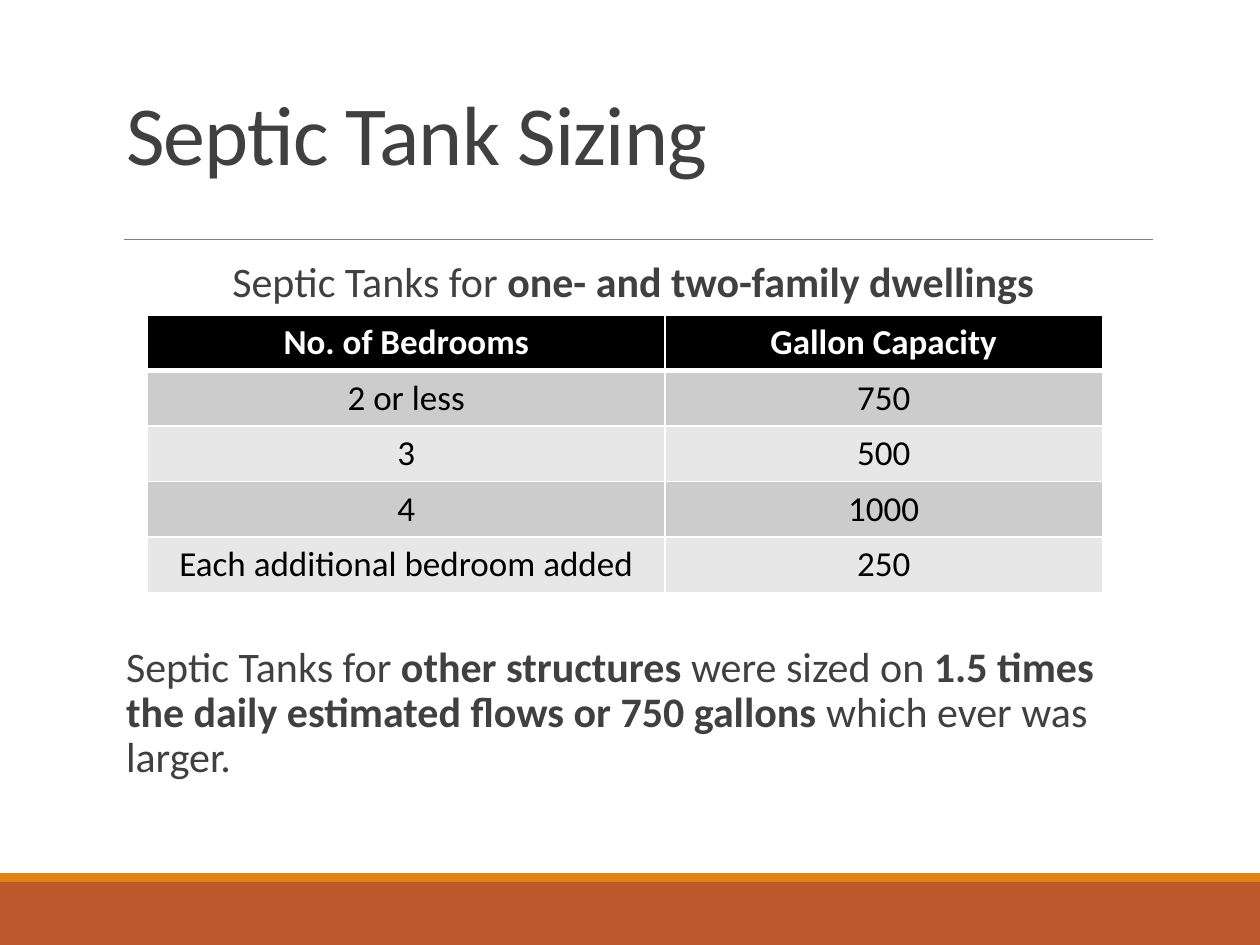
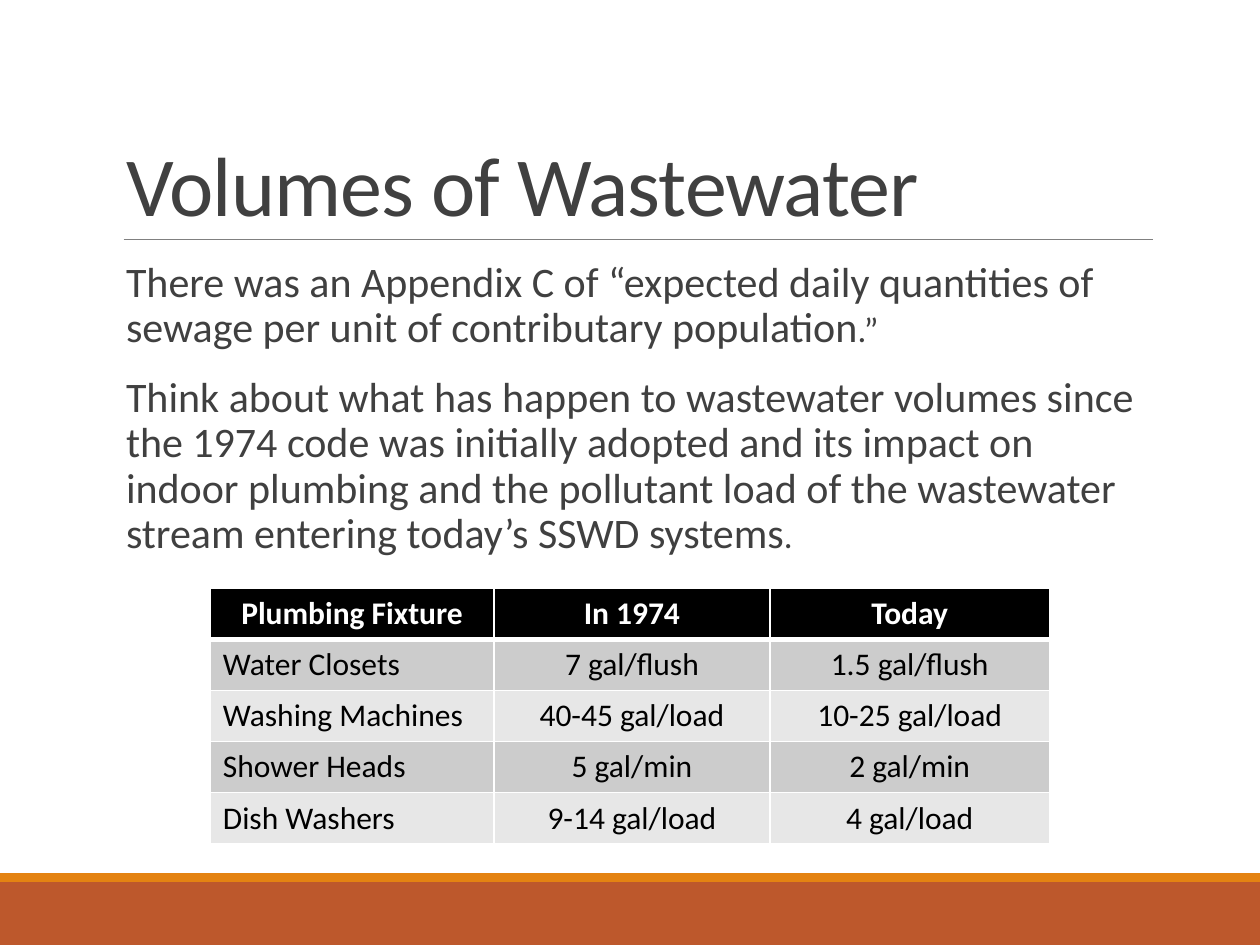
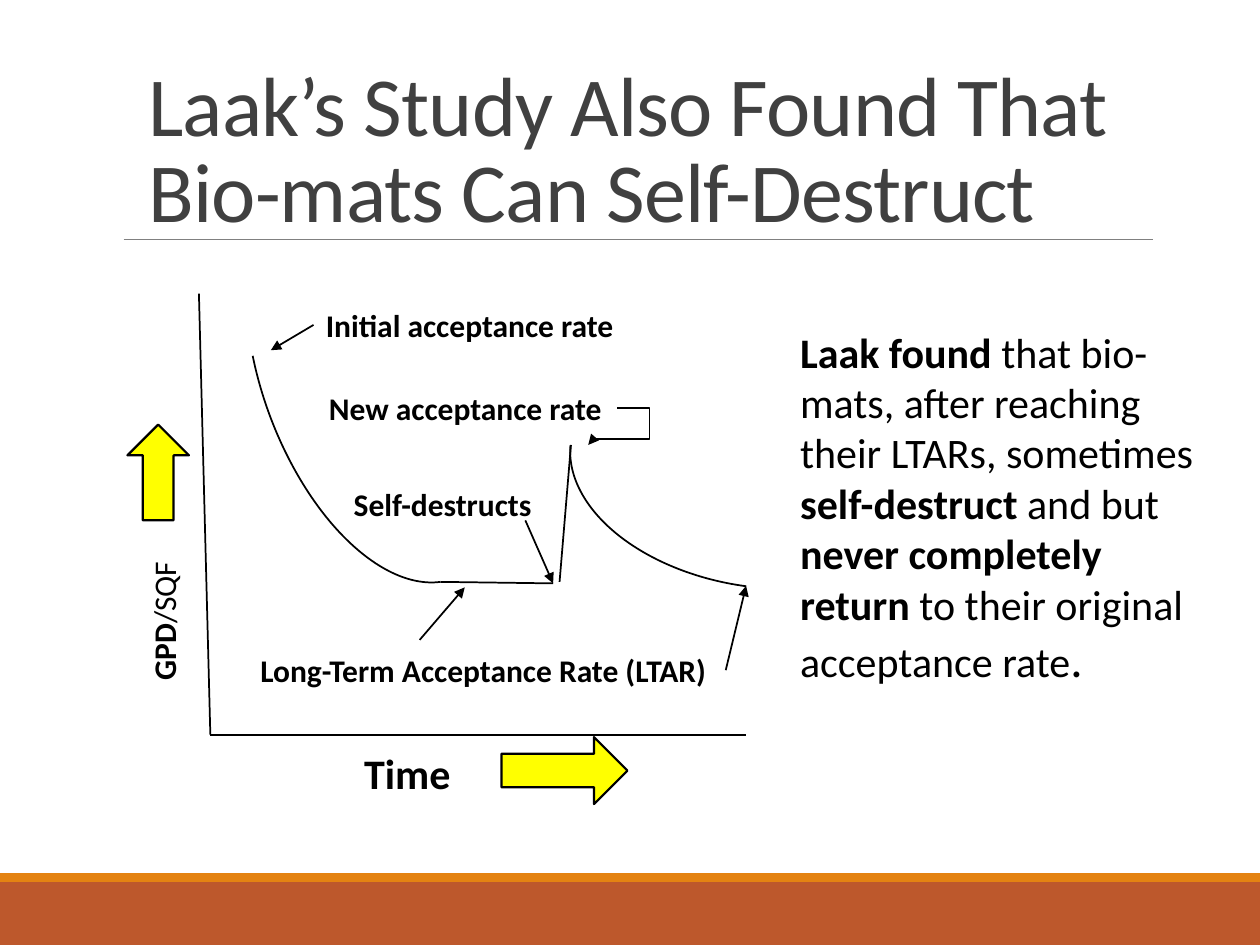
from lxml import etree
from pptx import Presentation
from pptx.dml.color import RGBColor
from pptx.enum.shapes import MSO_CONNECTOR, MSO_SHAPE
from pptx.enum.text import MSO_ANCHOR, MSO_AUTO_SIZE, PP_ALIGN
from pptx.oxml.ns import qn
from pptx.util import Cm, Pt

RECTANGLE, ARC = MSO_SHAPE.RECTANGLE, MSO_SHAPE.ARC
RIGHT_ARROW, UP_ARROW = MSO_SHAPE.RIGHT_ARROW, MSO_SHAPE.UP_ARROW
STRAIGHT, ELBOW = MSO_CONNECTOR.STRAIGHT, MSO_CONNECTOR.ELBOW
LEFT, CENTER = PP_ALIGN.LEFT, PP_ALIGN.CENTER

# Shared look
FONT = "Calibri"
BLACK, WHITE, TEXT = "000000", "FFFFFF", "404040"
RUST, ORANGE, RULE_GRAY, YELLOW = "BD582C", "E48312", "808080", "FFFF00"
ROW_FILLS = ("E7E7E7", "CCCCCC")
TITLE_BOX = (2.29, 0.79, 20.95, 3.02)
BODY_BOX = (2.29, 5.13, 20.95, 11.18)
TITLE_AND_BODY, TITLE_ONLY = 1, 5


def rgb(value):
    return RGBColor.from_string(value)


def place(shape, box):
    shape.left, shape.top, shape.width, shape.height = map(Cm, box)


def add_text(paragraph, text, size=18, color=BLACK, bold=False):
    """Append text; parts between ** marks switch between plain and bold."""
    for index, part in enumerate(text.split("**")):
        if part:
            run = paragraph.add_run()
            run.text = part
            run.font.name = FONT
            run.font.size = Pt(size)
            run.font.bold = bold or index % 2 == 1
            run.font.color.rgb = rgb(color)


# Lines and shapes
def add_line(slide, start, end, color=BLACK, width=1, arrow=False, kind=STRAIGHT):
    line = slide.shapes.add_connector(kind, *map(Cm, start + end))
    line.line.color.rgb = rgb(color)
    line.line.width = Pt(width)
    properties = line.element.spPr
    if arrow:
        etree.SubElement(properties.find(qn("a:ln")), qn("a:tailEnd"), type="triangle")
    etree.SubElement(properties, qn("a:effectLst"))
    return line


def add_bent_arrow(slide, start, end, adjustments):
    arrow = add_line(slide, start, end, arrow=True, kind=ELBOW)
    geometry = arrow.element.spPr.find(qn("a:prstGeom"))
    geometry.set("prst", "bentConnector4")
    values = geometry.find(qn("a:avLst"))
    if values is None:
        values = etree.SubElement(geometry, qn("a:avLst"))
    for number, value in enumerate(adjustments, 1):
        etree.SubElement(values, qn("a:gd"), name=f"adj{number}", fmla=f"val {value}")


def add_shape(slide, kind, box, fill=None, line=None, width=1):
    shape = slide.shapes.add_shape(kind, *map(Cm, box))
    shape.shadow.inherit = False
    if fill:
        shape.fill.solid()
        shape.fill.fore_color.rgb = rgb(fill)
    else:
        shape.fill.background()
    if line:
        shape.line.color.rgb = rgb(line)
        shape.line.width = Pt(width)
    else:
        shape.line.fill.background()
    return shape


def add_arc(slide, box, rotation, angles, flip=False):
    arc = add_shape(slide, ARC, box, line=BLACK)
    arc.rotation = rotation
    arc.adjustments[0], arc.adjustments[1] = angles
    if flip:
        arc.element.spPr.find(qn("a:xfrm")).set("flipH", "1")


def add_label(slide, text, box, size=18, wrap=False, rotation=0):
    label = slide.shapes.add_textbox(*map(Cm, box))
    label.rotation = rotation
    frame = label.text_frame
    frame.word_wrap = wrap
    frame.auto_size = MSO_AUTO_SIZE.SHAPE_TO_FIT_TEXT
    add_text(frame.paragraphs[0], text, size=size)
    return frame.paragraphs[0]


# Slide frame, title and body
def add_slide(presentation, layout, title, title_box=TITLE_BOX):
    slide = presentation.slides.add_slide(presentation.slide_layouts[layout])
    add_shape(slide, RECTANGLE, (0, 17.78, 25.4, 1.27), fill=RUST)
    add_shape(slide, RECTANGLE, (0, 17.6, 25.4, 0.18), fill=ORANGE)
    add_line(slide, (2.49, 4.83), (23.24, 4.83), color=RULE_GRAY, width=0.5)

    shape = slide.shapes.title
    place(shape, title_box)
    frame = shape.text_frame
    frame.auto_size = MSO_AUTO_SIZE.NONE
    frame.vertical_anchor = MSO_ANCHOR.BOTTOM
    paragraph = frame.paragraphs[0]
    paragraph.alignment = LEFT
    paragraph.line_spacing = 0.85
    add_text(paragraph, title, size=48, color=TEXT)
    for properties in shape.element.iter(qn("a:rPr")):
        properties.set("spc", "-50")
    return slide


def prepare_body(slide):
    body = slide.placeholders[1]
    place(body, BODY_BOX)
    frame = body.text_frame
    frame.auto_size = MSO_AUTO_SIZE.NONE
    frame.margin_left = frame.margin_right = 0
    frame.margin_top = frame.margin_bottom = Cm(0.13)
    return frame


def add_body_paragraph(frame, text, first=False, before=12, alignment=LEFT):
    paragraph = frame.paragraphs[0] if first else frame.add_paragraph()
    paragraph.alignment = alignment
    paragraph.line_spacing = 0.9
    paragraph.space_before = Pt(0 if first else before)
    paragraph.space_after = Pt(2)
    properties = paragraph._p.get_or_add_pPr()
    properties.set("marL", str(Cm(0.25) if alignment == LEFT else 0))
    properties.set("indent", "0")
    etree.SubElement(properties, qn("a:buNone"))
    add_text(paragraph, text, size=24, color=TEXT)
    return paragraph


# Tables
def set_borders(cell, row):
    properties = cell._tc.get_or_add_tcPr()
    widths = {"lnL": 1, "lnR": 1, "lnT": 3 if row == 1 else 1, "lnB": 3 if row == 0 else 1}
    for position, (side, width) in enumerate(widths.items()):
        border = etree.Element(qn(f"a:{side}"), w=str(Pt(width)))
        fill = etree.SubElement(border, qn("a:solidFill"))
        etree.SubElement(fill, qn("a:srgbClr"), val=WHITE)
        properties.insert(position, border)


def add_table(slide, rows, left, top, widths, row_height, size, first_alignment=CENTER):
    box = (left, top, sum(widths), row_height * len(rows))
    table = slide.shapes.add_table(len(rows), len(widths), *map(Cm, box)).table
    for column, width in zip(table.columns, widths):
        column.width = Cm(width)
    for row, values in enumerate(rows):
        table.rows[row].height = Cm(row_height)
        header = row == 0
        for column, value in enumerate(values):
            cell = table.cell(row, column)
            cell.fill.solid()
            cell.fill.fore_color.rgb = rgb(BLACK if header else ROW_FILLS[row % 2])
            set_borders(cell, row)
            paragraph = cell.text_frame.paragraphs[0]
            paragraph.alignment = CENTER if header or column else first_alignment
            add_text(paragraph, value, size=size, bold=header,
                     color=WHITE if header else BLACK)


# Slides
def add_sizing_slide(presentation):
    slide = add_slide(presentation, TITLE_AND_BODY, "Septic Tank Sizing")
    frame = prepare_body(slide)
    add_body_paragraph(frame, "Septic Tanks for **one- and two-family dwellings**",
                       first=True, alignment=CENTER)
    # The wide gap leaves room for the table
    add_body_paragraph(
        frame,
        "Septic Tanks for **other structures **were sized on **1.5 times the daily "
        "estimated flows or 750 gallons **which ever was larger.",
        before=192)
    rows = [
        ("No. of Bedrooms", "Gallon Capacity"),
        ("2 or less", "750"),
        ("3", "500"),
        ("4", "1000"),
        ("Each additional bedroom added", "250"),
    ]
    add_table(slide, rows, 2.97, 6.35, (10.44, 8.81), 1.1, size=20)


def add_volumes_slide(presentation):
    slide = add_slide(presentation, TITLE_AND_BODY, "Volumes of Wastewater",
                      title_box=(2.29, 0.79, 20.95, 4.04))
    frame = prepare_body(slide)
    appendix = add_body_paragraph(
        frame,
        "There was an Appendix C of “expected daily quantities of sewage per unit "
        "of contributary population",
        first=True)
    add_text(appendix, ".”", size=20, color=TEXT)
    impact = add_body_paragraph(
        frame,
        "Think about what has happen to wastewater volumes since the 1974 code was "
        "initially adopted and its impact on indoor plumbing and the pollutant load "
        "of the wastewater stream entering today’s SSWD systems")
    add_text(impact, ".", size=20, color=TEXT)
    rows = [
        ("Plumbing Fixture", "In 1974", "Today"),
        ("Water Closets", "7 gal/flush", "1.5 gal/flush"),
        ("Washing Machines", "40-45 gal/load", "10-25 gal/load"),
        ("Shower Heads", "5 gal/min", "2 gal/min"),
        ("Dish Washers", "9-14 gal/load", "4 gal/load"),
    ]
    add_table(slide, rows, 4.24, 11.86, (5.72, 5.56, 5.64), 1.03, size=18,
              first_alignment=LEFT)


def add_biomat_slide(presentation):
    slide = add_slide(presentation, TITLE_ONLY,
                      "Laak’s Study Also Found That Bio-mats Can Self-Destruct",
                      title_box=(2.74, 1.14, 20.95, 3.81))

    # Axes with their direction arrows
    origin = (4.24, 14.81)
    add_line(slide, (4.01, 5.92), origin)
    add_line(slide, origin, (15.04, 14.81))
    for kind, box in ((RIGHT_ARROW, (10.11, 14.86, 2.54, 1.35)),
                      (UP_ARROW, (2.57, 8.56, 1.24, 1.93))):
        add_shape(slide, kind, box, fill=YELLOW, line=BLACK, width=1.25)
    add_label(slide, "**GPD**/SQF", (1.8, 11.96, 3, 1.02), wrap=True, rotation=270)
    add_label(slide, "**Time**", (7.09, 14.94, 2.54, 1.27), size=24, wrap=True)

    # Acceptance rate curve: decline, plateau, jump, second decline
    add_arc(slide, (5.28, 3.12, 4.72, 8.81), 159.9, (164.17, 16.8))
    add_line(slide, (8.89, 11.73), (11.15, 11.76))
    add_line(slide, (11.51, 8.97), (11.28, 11.73))
    add_arc(slide, (12.9, 5.69, 4.7, 7.57), 279.2, (162.95, 2.5), flip=True)

    # Labels and their pointers
    for text, left, top, width in (
            ("Initial acceptance rate", 6.32, 6.05, 6.35),
            ("New acceptance rate", 6.38, 7.72, 6.05),
            ("Self-destructs", 6.88, 9.65, 4.24),
            ("Long-Term Acceptance Rate (LTAR)", 5, 13, 9.63)):
        add_label(slide, f"**{text}**", (left, top, width, 1.02))
    for start, end in (
            ((6.32, 6.55), (5.46, 7.06)),
            ((10.59, 10.49), (11.15, 11.76)),
            ((8.46, 12.9), (9.37, 11.84)),
            ((14.63, 13.51), (15.04, 11.81))):
        add_line(slide, start, end, arrow=True)
    add_bent_arrow(slide, (12.45, 8.23), (11.86, 8.97), (-109300, 84800))

    # Finding
    finding = add_label(
        slide,
        "**Laak found **that bio-mats, after reaching their LTARs, sometimes "
        "**self-destruct **and but **never completely return **to their original "
        "acceptance rate",
        (15.88, 6.45, 8.79, 7.62), size=24, wrap=True)
    add_text(finding, ".", size=28)


def main():
    presentation = Presentation()
    presentation.slide_width, presentation.slide_height = Cm(25.4), Cm(19.05)
    add_sizing_slide(presentation)
    add_volumes_slide(presentation)
    add_biomat_slide(presentation)
    presentation.save("out.pptx")


if __name__ == "__main__":
    main()
